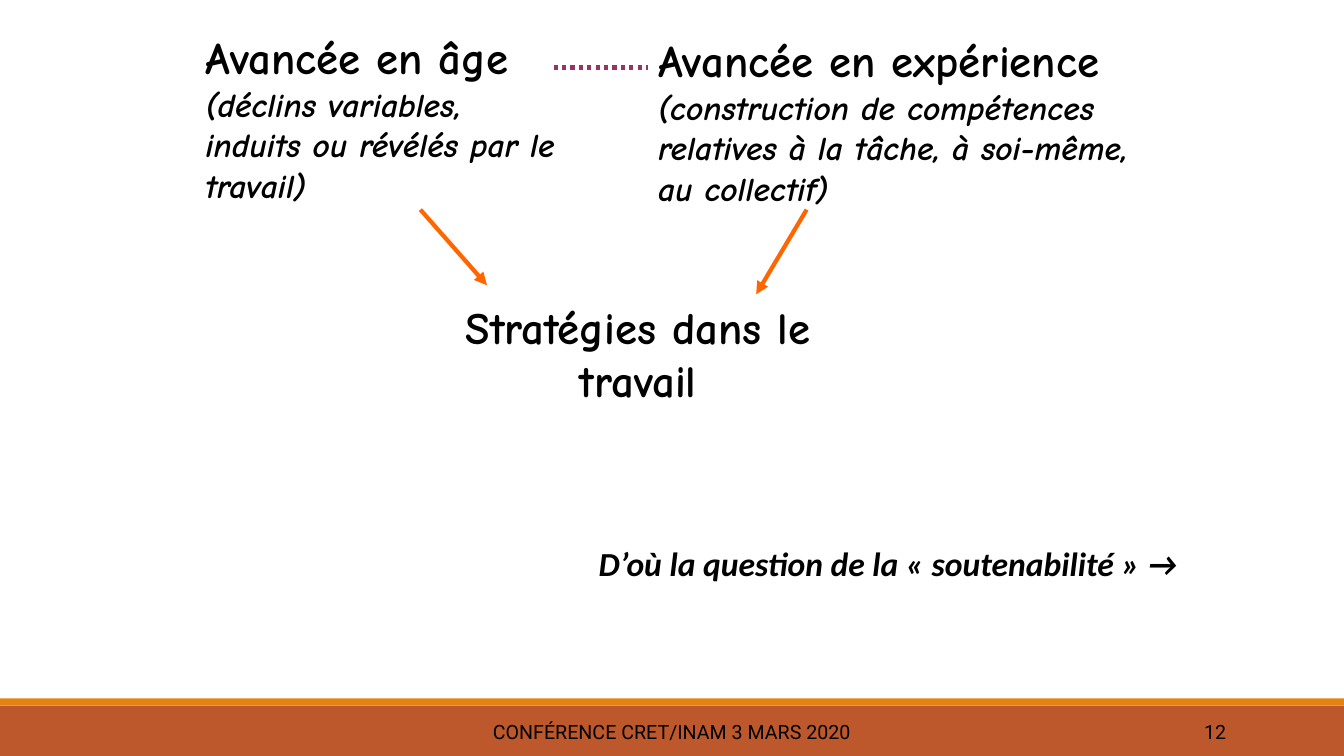
"""Build the slide on ageing, experience and strategies at work."""
from lxml import etree
from pptx import Presentation
from pptx.dml.color import RGBColor
from pptx.enum.dml import MSO_LINE
from pptx.enum.shapes import MSO_CONNECTOR, MSO_SHAPE
from pptx.enum.text import MSO_ANCHOR, PP_ALIGN
from pptx.oxml.ns import qn
from pptx.util import Inches, Pt

LEFT, CENTER, RIGHT = PP_ALIGN.LEFT, PP_ALIGN.CENTER, PP_ALIGN.RIGHT
TOP, MIDDLE = MSO_ANCHOR.TOP, MSO_ANCHOR.MIDDLE
RECTANGLE, STRAIGHT = MSO_SHAPE.RECTANGLE, MSO_CONNECTOR.STRAIGHT
DOTTED = MSO_LINE.ROUND_DOT

THEME = {
    "text": "000000", "band": "BD582C", "stripe": "E48312",
    "link": "993366", "arrow": "FF6600",
    "idea_font": "Comic Neue", "question_font": "Calibri", "footer_font": "Roboto",
    "title": 32, "detail": 24, "footer": 14, "stroke": 3,
}

WIDTH, HEIGHT = 13.33, 7.5
BANDS = [((0, 7, WIDTH, 0.5), "band"), ((0, 6.93, WIDTH, 0.07), "stripe")]
IDEAS = [
    ((1.94, 0.25, 3.7, 1.85), LEFT, "Avancée en âge ",
     "(déclins variables, induits ou révélés par le travail)"),
    ((6.43, 0.28, 5.24, 2.46), LEFT, "Avancée en expérience ",
     "(construction de compétences relatives à la tâche, à soi-même, au collectif)"),
    ((4.33, 2.92, 4, 1.78), CENTER, "Stratégies dans le travail", ""),
]
QUESTION = ((5.84, 5.34, 6.43, 0.5), "D’où la question de la « soutenabilité » →")
FOOTERS = [
    ((4.03, 7.06, 5.27, 0.4), CENTER, "CONFÉRENCE CRET/INAM 3 MARS 2020"),
    ((10.83, 7.06, 1.43, 0.4), RIGHT, "12"),
]
LINK = ((5.49, 0.67), (6.43, 0.67))
ARROWS = [((4.17, 2.08), (4.83, 2.83)), ((8, 2.08), (7.5, 2.92))]


def color(name):
    """Return a theme colour."""
    return RGBColor.from_string(THEME[name])


def add_band(page, place, fill):
    """Add a plain filled rectangle."""
    band = page.shapes.add_shape(RECTANGLE, *map(Inches, place))
    band.shadow.inherit = False
    band.fill.solid()
    band.fill.fore_color.rgb = color(fill)
    band.line.fill.background()


def add_box(page, place, align=LEFT, anchor=TOP):
    """Add a wrapping text box and return its paragraph."""
    frame = page.shapes.add_textbox(*map(Inches, place)).text_frame
    frame.word_wrap = True
    frame.vertical_anchor = anchor
    para = frame.paragraphs[0]
    para.alignment = align
    return para


def add_span(para, text, font, size, bold=False, italic=False):
    """Add formatted text to a paragraph."""
    span = para.add_run()
    span.text = text
    span.font.name = THEME[font]
    span.font.size = Pt(THEME[size])
    span.font.bold = bold
    span.font.italic = italic
    span.font.color.rgb = color("text")


def add_line(page, ends, stroke, dash=None, arrow=False):
    """Add a straight line, dashed or with an arrowhead if asked."""
    start, end = ends
    line = page.shapes.add_connector(STRAIGHT, *map(Inches, start + end))
    line.line.color.rgb = color(stroke)
    line.line.width = Pt(THEME["stroke"])
    if dash:
        line.line.dash_style = dash
    if arrow:
        etree.SubElement(line.line._get_or_add_ln(), qn("a:tailEnd"), type="triangle")
    etree.SubElement(line._element.spPr, qn("a:effectLst"))


def main():
    """Draw the slide and save the deck."""
    deck = Presentation()
    deck.slide_width, deck.slide_height = Inches(WIDTH), Inches(HEIGHT)
    page = deck.slides.add_slide(deck.slide_layouts[6])
    for place, fill in BANDS:
        add_band(page, place, fill)
    for place, align, text in FOOTERS:
        add_span(add_box(page, place, align, MIDDLE), text, "footer_font", "footer")
    for place, align, title, detail in IDEAS:
        para = add_box(page, place, align)
        add_span(para, title, "idea_font", "title", bold=True)
        if detail:
            add_span(para, detail, "idea_font", "detail", bold=True, italic=True)
    add_line(page, LINK, "link", dash=DOTTED)
    for ends in ARROWS:
        add_line(page, ends, "arrow", arrow=True)
    place, text = QUESTION
    add_span(add_box(page, place), text, "question_font", "detail", bold=True, italic=True)
    deck.save("out.pptx")


if __name__ == "__main__":
    main()
